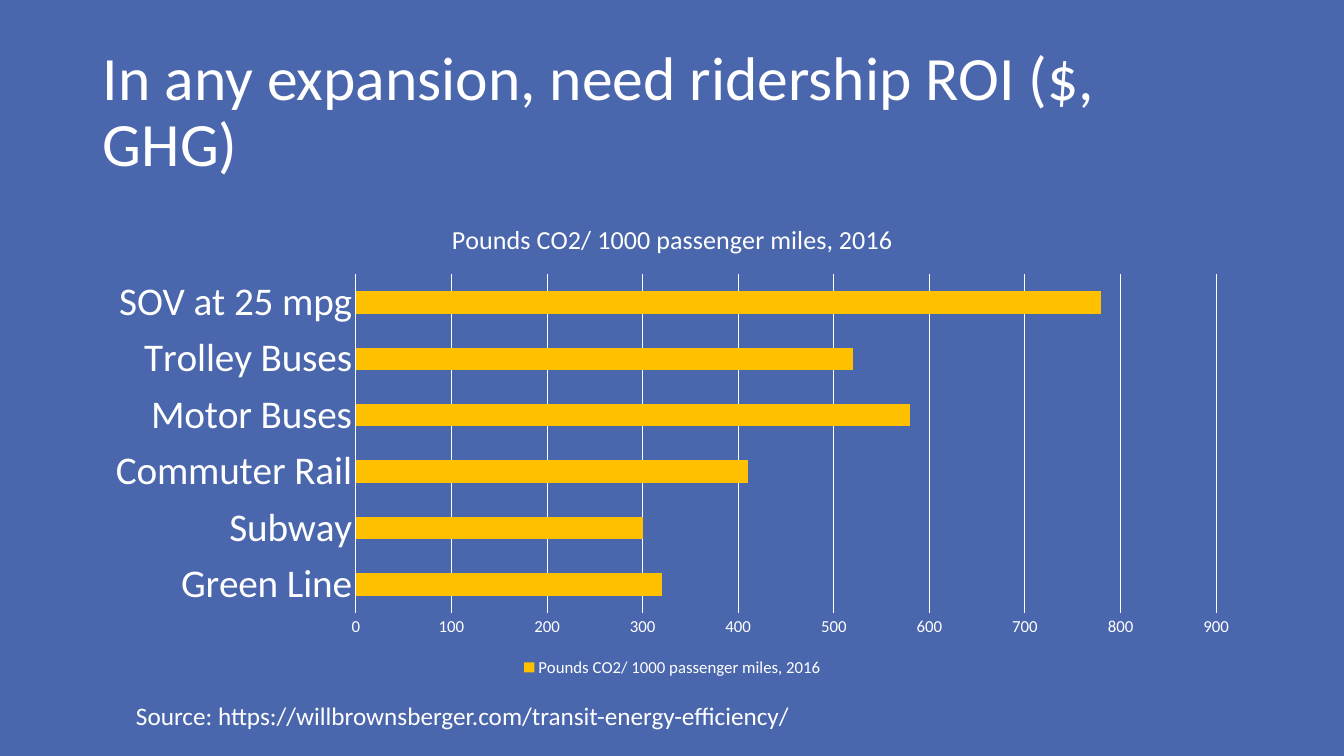
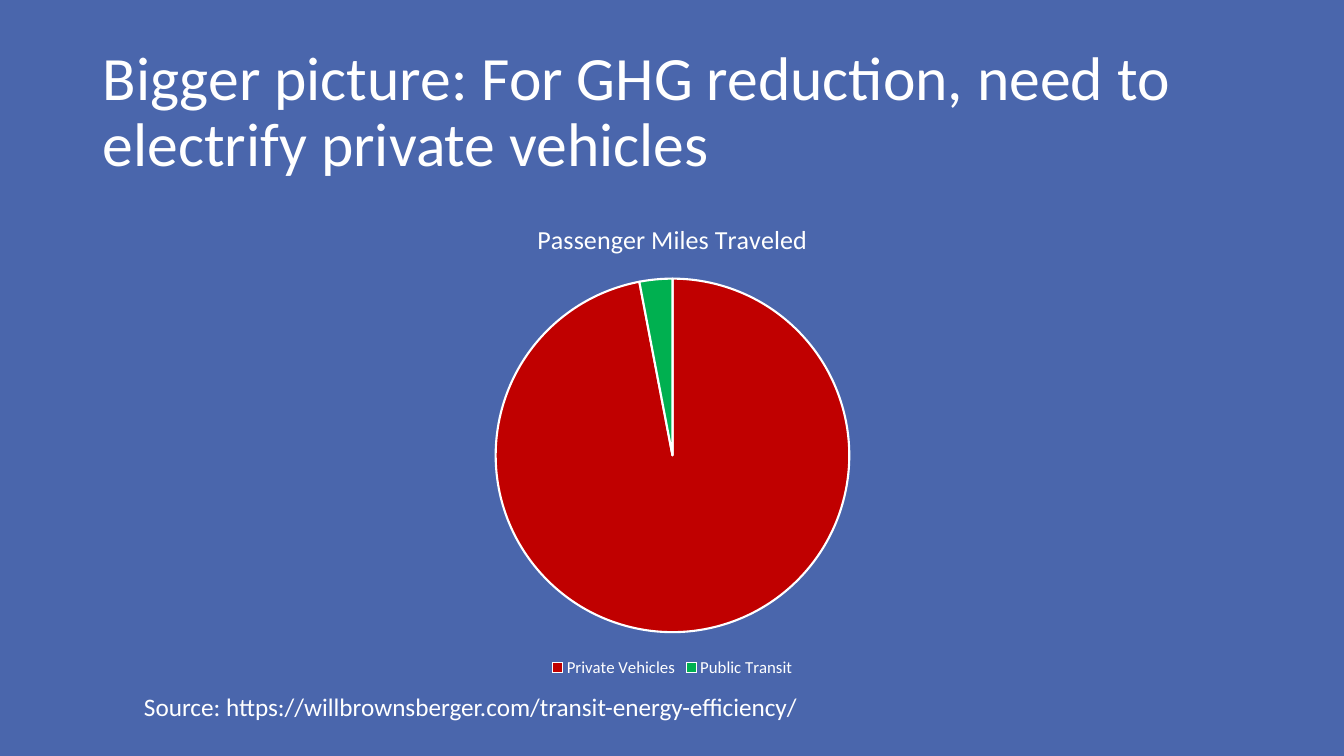
import pptx
import pptx.chart.data
import pptx.dml.color
import pptx.enum.chart
import pptx.enum.text
import pptx.util

Inches = pptx.util.Inches
Pt = pptx.util.Pt
XL = pptx.enum.chart

BLUE, WHITE, GOLD, RED, GREEN = "4A66AC", "FFFFFF", "FFC000", "C00000", "00B050"
FONT = "Calibri"
TITLE_BOX = (0.92, 0.4, 11.5, 1.45)
CHART_BOX = (0.92, 2, 11.5, 4.76)
SOURCE = "Source: https://willbrownsberger.com/transit-energy-efficiency/"


def rgb(value):
    return pptx.dml.color.RGBColor.from_string(value)


def paint(fill, value):
    fill.solid()
    fill.fore_color.rgb = rgb(value)


def draw_line(line, width):
    line.color.rgb = rgb(WHITE)
    line.width = Pt(width)


def style_font(font, size):
    for name, value in {"name": FONT, "size": Pt(size), "bold": False}.items():
        setattr(font, name, value)
    font.color.rgb = rgb(WHITE)


def add_page(deck, title):
    """Add a title-only slide and format its title."""
    page = deck.slides.add_slide(deck.slide_layouts[5])
    shape = page.shapes.title
    shape.left, shape.top, shape.width, shape.height = map(Inches, TITLE_BOX)
    frame = shape.text_frame
    frame.text = title
    frame.auto_size = pptx.enum.text.MSO_AUTO_SIZE.NONE
    frame.vertical_anchor = pptx.enum.text.MSO_ANCHOR.MIDDLE
    para = frame.paragraphs[0]
    para.alignment = pptx.enum.text.PP_ALIGN.LEFT
    para.line_spacing = 0.9
    style_font(para.runs[0].font, 44)
    return page


def add_source(page, left, top, width):
    box = page.shapes.add_textbox(*map(Inches, (left, top, width, 0.4)))
    frame = box.text_frame
    frame.word_wrap = False
    frame.auto_size = pptx.enum.text.MSO_AUTO_SIZE.SHAPE_TO_FIT_TEXT
    frame.text = SOURCE
    style_font(frame.paragraphs[0].runs[0].font, 18)


def add_chart(page, kind, name, values):
    """Add a titled chart with one series and a legend below it."""
    data = pptx.chart.data.CategoryChartData()
    data.categories = list(values)
    data.add_series(name, list(values.values()))
    chart = page.shapes.add_chart(kind, *map(Inches, CHART_BOX), data).chart
    style_font(chart.font, 10)
    chart.has_title = True
    chart.chart_title.text_frame.text = name
    style_font(chart.chart_title.text_frame.paragraphs[0].runs[0].font, 18.6)
    chart.has_legend = True
    chart.legend.position = XL.XL_LEGEND_POSITION.BOTTOM
    chart.legend.include_in_layout = False
    style_font(chart.legend.font, 12)
    return chart


def add_bar_chart(page, name, values):
    chart = add_chart(page, XL.XL_CHART_TYPE.BAR_STACKED, name, values)
    plot = chart.plots[0]
    plot.vary_by_categories = False
    plot.gap_width, plot.overlap = 150, 100
    paint(plot.series[0].format.fill, GOLD)

    for axis, size in ((chart.category_axis, 28), (chart.value_axis, 12)):
        axis.major_tick_mark = axis.minor_tick_mark = XL.XL_TICK_MARK.NONE
        style_font(axis.tick_labels.font, size)
    draw_line(chart.category_axis.format.line, 0.75)

    scale = chart.value_axis
    scale.minimum_scale, scale.maximum_scale, scale.major_unit = 0, 900, 100
    scale.format.line.fill.background()
    scale.has_major_gridlines = True
    draw_line(scale.major_gridlines.format.line, 0.75)


def add_pie_chart(page, name, values, colors):
    chart = add_chart(page, XL.XL_CHART_TYPE.PIE, name, values)
    plot = chart.plots[0]
    plot.vary_by_categories = True
    for index, color in enumerate(colors):
        wedge = plot.series[0].points[index].format
        paint(wedge.fill, color)
        draw_line(wedge.line, 1.5)


def main():
    deck = pptx.Presentation()
    deck.slide_width, deck.slide_height = Inches(13.33), Inches(7.5)
    paint(deck.slide_master.background.fill, BLUE)

    page = add_page(deck, "In any expansion, need ridership ROI ($, GHG)")
    add_bar_chart(page, "Pounds CO2/ 1000 passenger miles, 2016", {
        "Green Line": 320,
        "Subway": 300,
        "Commuter Rail": 410,
        "Motor Buses": 580,
        "Trolley Buses": 520,
        "SOV at 25 mpg": 780,
    })
    add_source(page, 1.25, 6.9, 6.71)

    page = add_page(deck, "Bigger picture: For GHG reduction, need to electrify private vehicles")
    add_pie_chart(page, "Passenger Miles Traveled",
                  {"Private Vehicles": 97, "Public Transit": 3}, (RED, GREEN))
    add_source(page, 1.33, 6.81, 6.77)

    deck.save("out.pptx")


if __name__ == "__main__":
    main()
